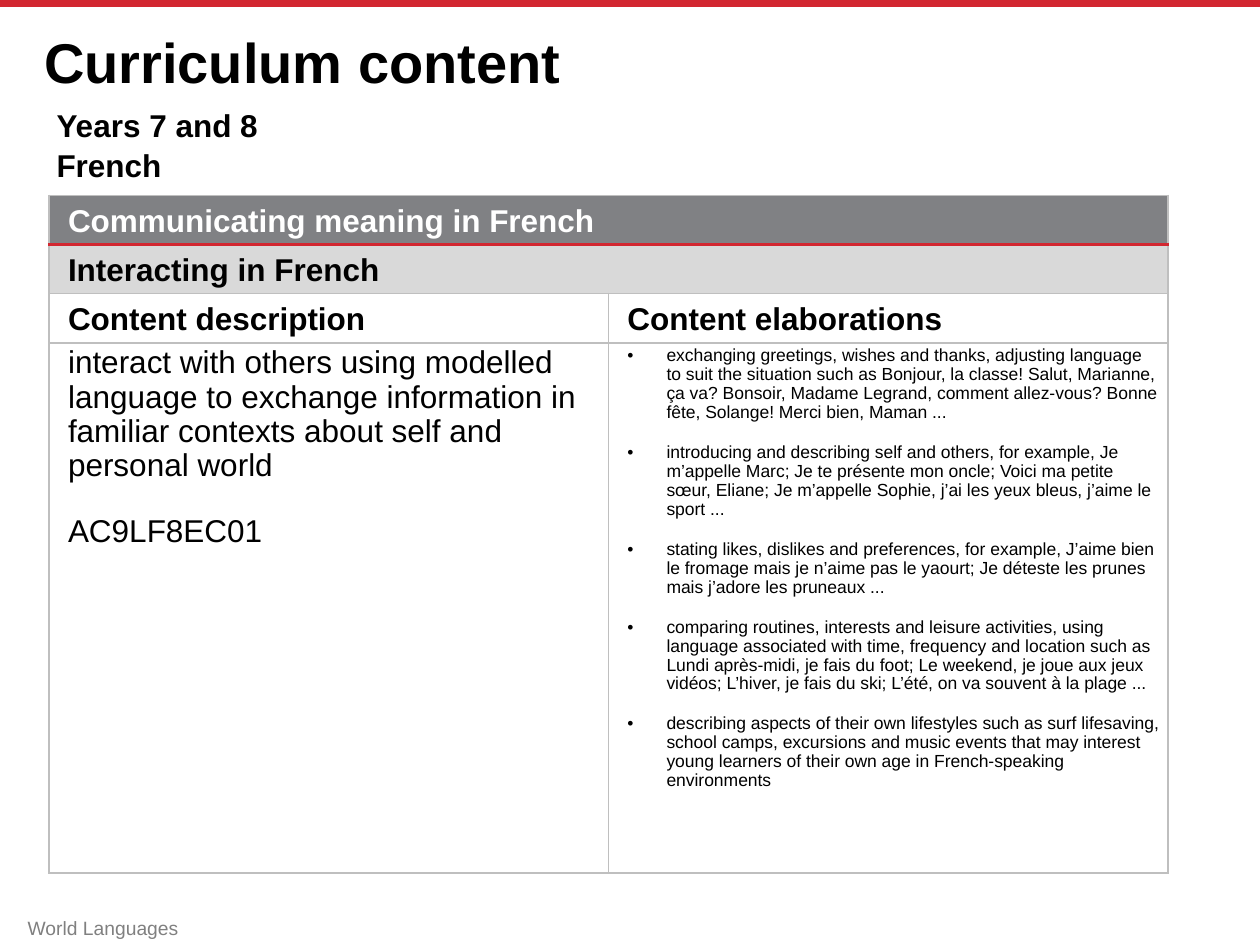
from dataclasses import dataclass

from lxml import etree
from pptx import Presentation
from pptx.dml.color import RGBColor
from pptx.enum.shapes import MSO_CONNECTOR
from pptx.enum.text import MSO_ANCHOR
from pptx.oxml.ns import qn
from pptx.util import Inches, Pt

STRAIGHT = MSO_CONNECTOR.STRAIGHT
TOP, MIDDLE = MSO_ANCHOR.TOP, MSO_ANCHOR.MIDDLE


@dataclass(frozen=True)
class Theme:
    font: str = "Arial"
    red: str = "D22730"
    black: str = "000000"
    white: str = "FFFFFF"
    dark: str = "808184"
    pale: str = "D9D9D9"
    rule: str = "BFBFBF"
    muted: str = "808080"
    title: int = 32
    body: int = 18
    small: int = 10
    foot: int = 11


theme = Theme()


def write(para, text, size, color=theme.black, bold=False):
    run = para.add_run()
    run.text = text
    font = run.font
    font.name, font.size, font.bold = theme.font, Pt(size), bold
    font.color.rgb = RGBColor.from_string(color)


def edge(cell, side, color, width):
    """Draw one cell border; call in the order L, R, T, B, before the fill."""
    props = cell._tc.get_or_add_tcPr()
    line = etree.SubElement(props, qn(f"a:ln{side}"), w=str(Pt(width)))
    fill = etree.SubElement(line, qn("a:solidFill"))
    etree.SubElement(fill, qn("a:srgbClr"), val=color)


deck = Presentation()
deck.slide_width, deck.slide_height = Inches(10), Inches(7.5)
slide = deck.slides.add_slide(deck.slide_layouts[6])
shapes = slide.shapes

# Red band along the top
band = shapes.add_connector(STRAIGHT, 0, Inches(0.03), Inches(10), Inches(0.03))
band.line.color.rgb = RGBColor.from_string(theme.red)
band.line.width = Pt(4.2)
etree.SubElement(band._element.spPr, qn("a:effectLst"))

# Footer, title and subtitle: place, side inset, top inset, anchor, lines, style
labels = [
    ((0.12, 7.21, 9.65, 0.29), 0.1, 0.06, TOP,
     ["World Languages"], (theme.foot, theme.muted, False)),
    ((0.35, 0.28, 9.29, 0.48), 0, 0, MIDDLE,
     ["Curriculum content"], (theme.title, theme.black, True)),
    ((0.35, 0.77, 8.81, 0.71), 0.1, 0.07, TOP,
     ["Years 7 and 8", "French"], (theme.body, theme.black, True)),
]
for place, side, top, anchor, lines, style in labels:
    frame = shapes.add_textbox(*map(Inches, place)).text_frame
    frame.word_wrap = True
    frame.vertical_anchor = anchor
    frame.margin_left = frame.margin_right = Inches(side)
    frame.margin_top, frame.margin_bottom = Inches(top), 0
    for i, line in enumerate(lines):
        para = frame.add_paragraph() if i else frame.paragraphs[0]
        if i:
            para.space_before = Pt(1.3)
        if style[0] == theme.title:
            para.line_spacing = 0.9
        write(para, line, *style)

# Curriculum table
heads = [
    (["Communicating meaning in French"], theme.dark, theme.white),
    (["Interacting in French"], theme.pale, theme.black),
    (["Content description", "Content elaborations"], theme.white, theme.black),
]
detail = [
    "interact with others using modelled language to exchange information in "
    "familiar contexts about self and personal world",
    "AC9LF8EC01",
]
points = [
    "exchanging greetings, wishes and thanks, adjusting language to suit the "
    "situation such as Bonjour, la classe! Salut, Marianne, ça va? Bonsoir, "
    "Madame Legrand, comment allez-vous? Bonne fête, Solange! Merci bien, Maman ...",
    "introducing and describing self and others, for example, Je m’appelle Marc; "
    "Je te présente mon oncle; Voici ma petite sœur, Eliane; Je m’appelle Sophie, "
    "j’ai les yeux bleus, j’aime le sport ...",
    "stating likes, dislikes and preferences, for example, J’aime bien le fromage "
    "mais je n’aime pas le yaourt; Je déteste les prunes mais j’adore les pruneaux ...",
    "comparing routines, interests and leisure activities, using language "
    "associated with time, frequency and location such as Lundi après-midi, je "
    "fais du foot; Le weekend, je joue aux jeux vidéos; L’hiver, je fais du ski; "
    "L’été, on va souvent à la plage ...",
    "describing aspects of their own lifestyles such as surf lifesaving, school "
    "camps, excursions and music events that may interest young learners of their "
    "own age in French-speaking environments",
]

last = len(heads)
table = shapes.add_table(last + 1, 2, Inches(0.39), Inches(1.55),
                         Inches(8.88), Inches(5.37)).table
table.first_row = table.horz_banding = False
for col in table.columns:
    col.width = Inches(4.44)
for r, row in enumerate(table.rows):
    row.height = Inches(4.21 if r == last else 0.39)
    for cell in row.cells:
        cell.margin_left = cell.margin_right = Inches(0.07)
        cell.margin_top = Inches(0.03)
        cell.margin_bottom = Inches(0.16 if r == last else 0.03)
        cell.vertical_anchor = TOP if r == last else MIDDLE
        for side in "LRTB":
            red = (r, side) in ((0, "B"), (1, "T"))
            edge(cell, side, theme.red if red else theme.rule, 1.5 if red else 1)
        if r == last:
            cell.fill.background()
        else:
            cell.fill.solid()
            cell.fill.fore_color.rgb = RGBColor.from_string(heads[r][1])

for r, (texts, _, color) in enumerate(heads):
    if len(texts) == 1:
        table.cell(r, 0).merge(table.cell(r, 1))
    for c, text in enumerate(texts):
        para = table.cell(r, c).text_frame.paragraphs[0]
        para._p.get_or_add_pPr().set("marL", str(Inches(0.08)))
        para.line_spacing = 1.1
        write(para, text, theme.body, color, True)

bodies = [(detail, theme.body, 18, 0.08, 0), (points, theme.small, 12, 0.39, -0.31)]
for c, (texts, size, after, left, hang) in enumerate(bodies):
    frame = table.cell(last, c).text_frame
    for i, text in enumerate(texts):
        para = frame.add_paragraph() if i else frame.paragraphs[0]
        props = para._p.get_or_add_pPr()
        props.set("marL", str(Inches(left)))
        props.set("indent", str(Inches(hang)))
        if hang:
            etree.SubElement(props, qn("a:buFont"), typeface=theme.font)
            etree.SubElement(props, qn("a:buChar"), char="•")
        para.line_spacing = 0.97
        para.space_after = Pt(after)
        write(para, text, size)

deck.save("out.pptx")
